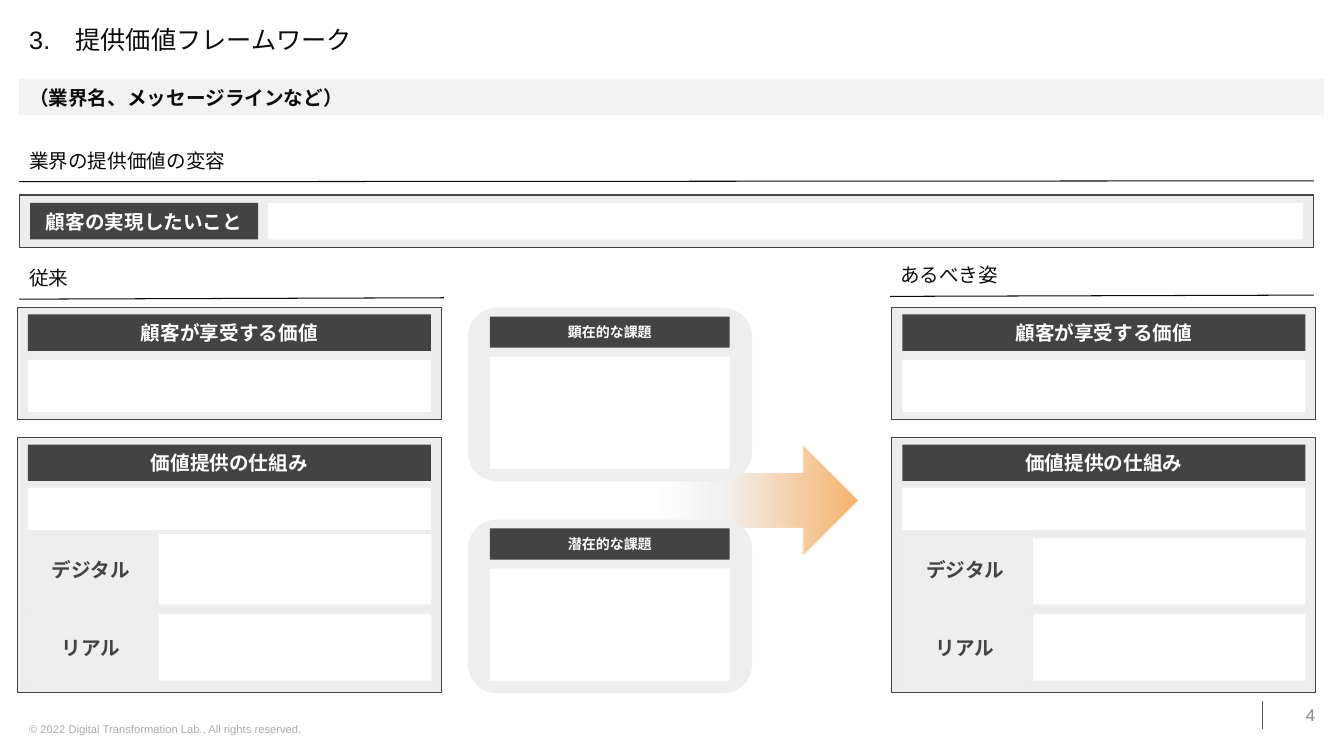
from copy import deepcopy

from lxml import etree
from pptx import Presentation
from pptx.dml.color import RGBColor
from pptx.enum import shapes, text
from pptx.oxml.ns import qn
from pptx.util import Pt

INK = RGBColor(0x0C, 0x0C, 0x0C)
DARK = RGBColor(0x43, 0x43, 0x43)
WHITE = RGBColor(0xFF, 0xFF, 0xFF)
PALE = RGBColor(0xF2, 0xF2, 0xF2)
PANEL = RGBColor(0xED, 0xED, 0xED)
CARD = RGBColor(0xEE, 0xEE, 0xEE)
ORANGE = RGBColor(0xF6, 0xB2, 0x6B)
FOOTER = RGBColor(0xAE, 0xAB, 0xAB)
NUMBER = RGBColor(0x88, 0x88, 0x88)
DIVIDER = RGBColor(0x59, 0x59, 0x59)
RECTANGLE = shapes.MSO_SHAPE.RECTANGLE
ROUNDED = shapes.MSO_SHAPE.ROUNDED_RECTANGLE
LEFT, CENTER, RIGHT = text.PP_ALIGN.LEFT, text.PP_ALIGN.CENTER, text.PP_ALIGN.RIGHT

presentation = Presentation()
presentation.slide_width = Pt(960)
presentation.slide_height = Pt(540)
slide = presentation.slides.add_slide(presentation.slide_layouts[5])


def write(shape, words, size, color, align=LEFT, bold=False):
    frame = shape.text_frame
    frame.word_wrap = True
    frame.auto_size = text.MSO_AUTO_SIZE.NONE
    frame.vertical_anchor = text.MSO_ANCHOR.MIDDLE
    frame.text = words
    paragraph = frame.paragraphs[0]
    paragraph.alignment = align
    paragraph.font.name = "Arial"
    paragraph.font.size = Pt(size)
    paragraph.font.bold = bold
    paragraph.font.color.rgb = color


def add_box(left, top, width, height, fill, line=None, kind=RECTANGLE):
    shape = slide.shapes.add_shape(kind, Pt(left), Pt(top), Pt(width), Pt(height))
    shape.shadow.inherit = False
    shape.fill.solid()
    shape.fill.fore_color.rgb = fill
    if line is None:
        shape.line.fill.background()
    else:
        shape.line.color.rgb = line
        shape.line.width = Pt(0.75)
    return shape


title = slide.shapes.title
title.left, title.top, title.width, title.height = Pt(13.7), Pt(0), Pt(946), Pt(56)
write(title, "3.\u3000提供価値フレームワーク".replace("\u3000", "　"), 18, INK)

arrow = add_box(466.5, 317.5, 147, 80, WHITE, WHITE, shapes.MSO_SHAPE.RIGHT_ARROW)
arrow.fill.gradient()
arrow.fill.gradient_angle = 0
stop_list = arrow._element.spPr.find(qn("a:gradFill")).find(qn("a:gsLst"))
stop_list.insert(1, deepcopy(stop_list[0]))
stop_list[1].set("pos", "32000")
for stop, color in zip(arrow.fill.gradient_stops, (WHITE, PALE, ORANGE)):
    stop.color.rgb = color

for words, left, top, width, height, size, color, align in (
    ("業界の提供価値の変容", 13.7, 101.5, 850, 26, 14, INK, LEFT),
    ("従来", 13.7, 185, 278, 26, 14, INK, LEFT),
    ("あるべき姿", 635.8, 183, 278, 26, 14, INK, LEFT),
    ("© 2022 Digital Transformation Lab., All rights reserved.",
     13.7, 512, 214, 17, 8, FOOTER, LEFT),
    ("4", 901.5, 501, 45, 19, 12, NUMBER, RIGHT),
):
    label = slide.shapes.add_textbox(Pt(left), Pt(top), Pt(width), Pt(height))
    write(label, words, size, color, align)

for start_x, start_y, end_x, end_y, color in (
    (938.5, 129.2, 13.7, 129.8, INK),
    (317, 212.7, 13.7, 213.7, INK),
    (938.5, 210.8, 635.8, 211.7, INK),
    (901.5, 501, 901.5, 520.5, DIVIDER),
):
    rule = slide.shapes.add_connector(
        shapes.MSO_CONNECTOR.STRAIGHT, Pt(start_x), Pt(start_y), Pt(end_x), Pt(end_y))
    rule.line.color.rgb = color
    rule.line.width = Pt(0.75)
    etree.SubElement(rule._element.spPr, qn("a:effectLst"))

message = add_box(13.7, 56.5, 932, 26, PALE)
write(message, "（業界名、メッセージラインなど）", 14, INK, bold=True)

add_box(13.7, 139.3, 924.7, 37.4, PANEL, DARK)
goal = add_box(21.5, 145, 163, 26, DARK)
write(goal, "顧客の実現したいこと", 14, WHITE, CENTER, True)
add_box(191.5, 145, 739, 26, WHITE)

for left, digital_top in ((12.4, 381.6), (637, 384.5)):
    inner = left + 7.5
    for heading, top, height, field_top, field_height in (
        ("顧客が享受する価値", 219.6, 80, 257, 37.5),
        ("価値提供の仕組み", 312.5, 182.5, 348.5, 30.2),
    ):
        add_box(left, top, 302.7, height, PANEL, DARK)
        header = add_box(inner, top + 5, 288, 26, DARK)
        write(header, heading, 14, WHITE, CENTER, True)
        add_box(inner, field_top, 288, field_height, WHITE)
    for channel, top, field_top, field_bottom in (
        ("デジタル", 382, digital_top, 431.8),
        ("リアル", 438, 438.5, 486.2),
    ):
        tag = add_box(inner, top, 90, 49.7, CARD)
        write(tag, channel, 14, DARK, CENTER, True)
        add_box(left + 100.9, field_top, 194.6, field_bottom - field_top, WHITE)

for issue, top in (("顕在的な課題", 219.8), ("潜在的な課題", 371.2)):
    card = add_box(334.2, top, 203, 124, CARD, kind=ROUNDED)
    card.adjustments[0] = 0.167
    header = add_box(350, top + 6.3, 171.2, 22.3, DARK)
    write(header, issue, 10, WHITE, CENTER, True)
    add_box(350, top + 35, 171.2, 80, WHITE)

presentation.save("out.pptx")
